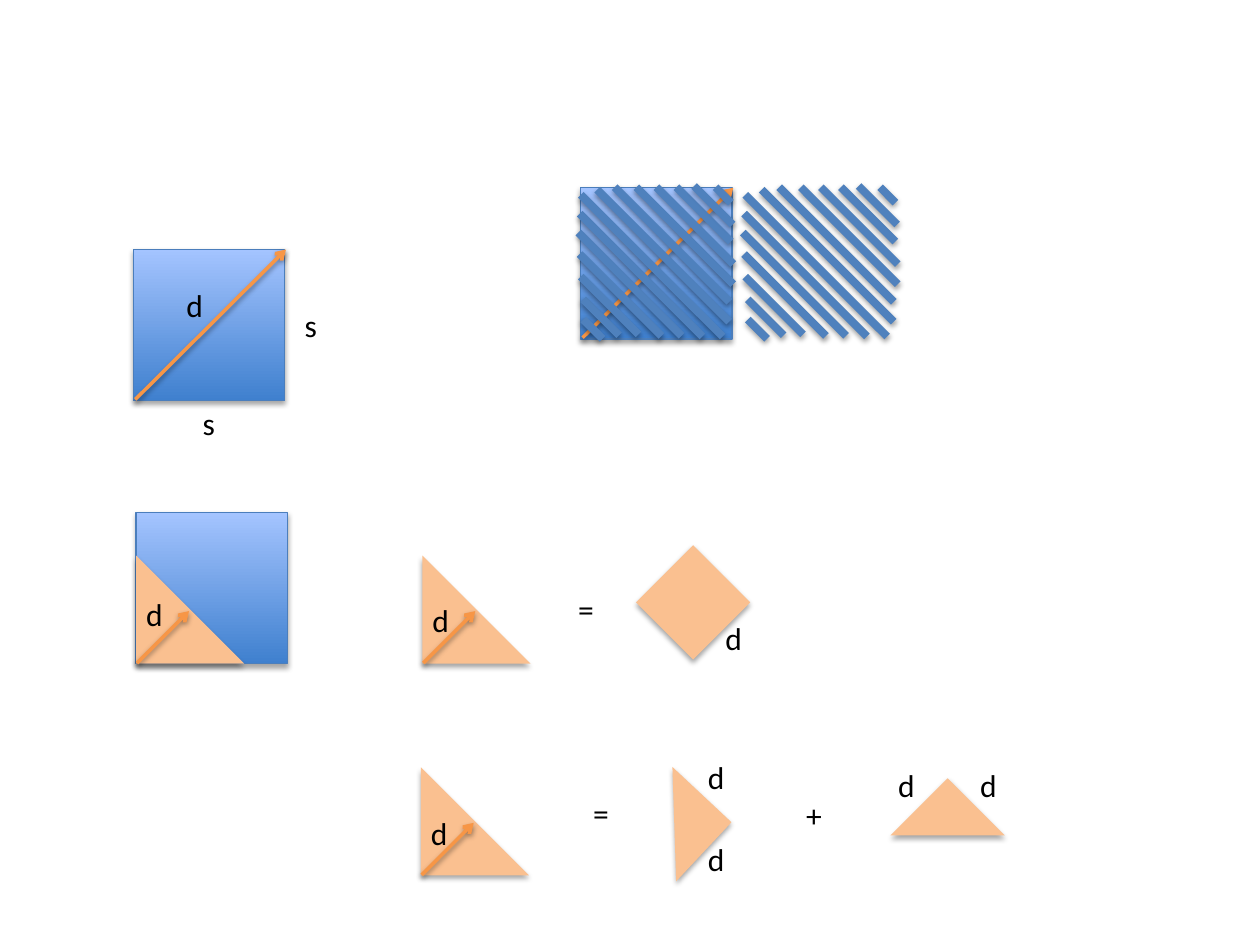
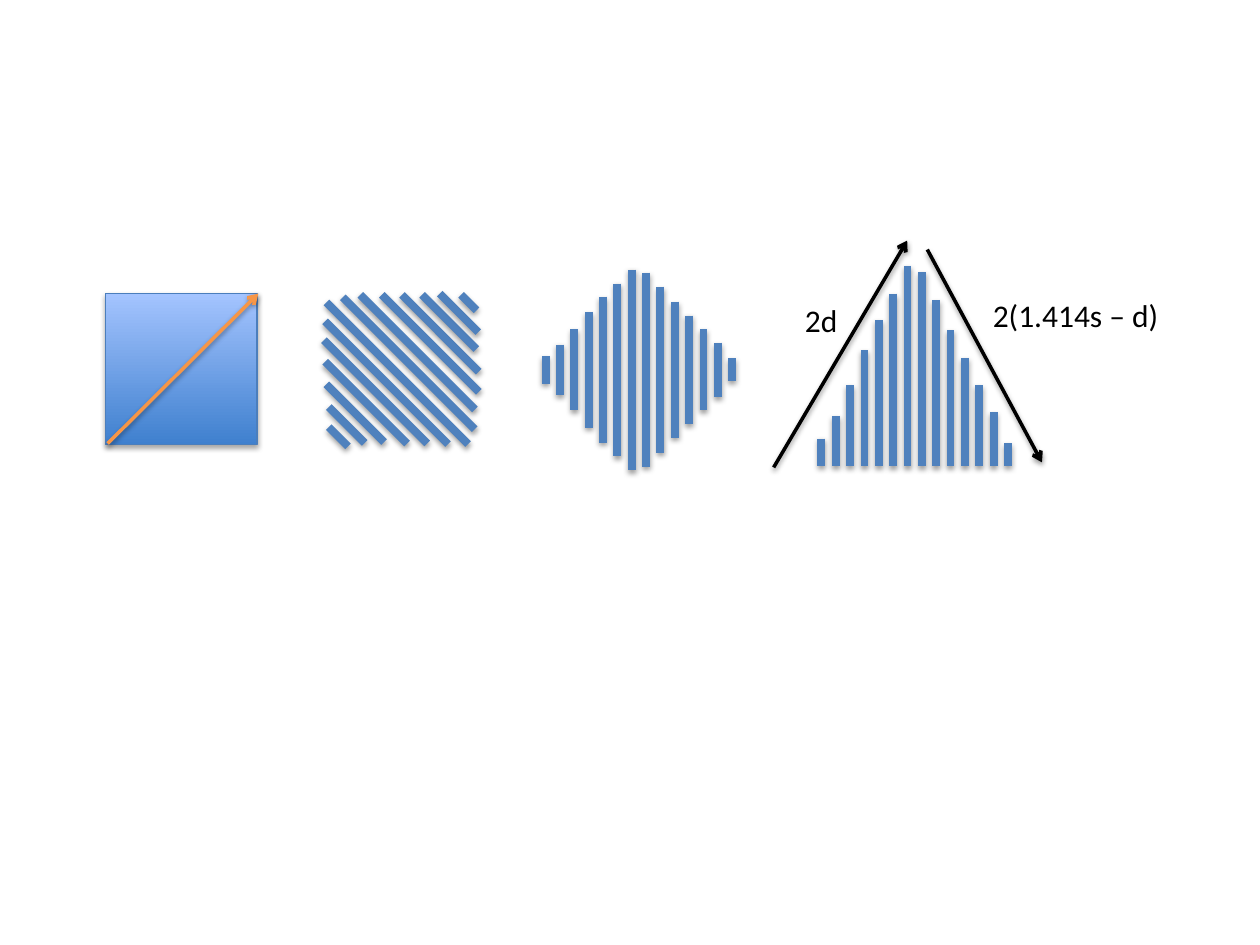
from dataclasses import dataclass
from lxml import etree
from pptx import Presentation
from pptx import util as u
from pptx.dml.color import RGBColor
from pptx.enum import shapes, text
from pptx.oxml import ns
from pptx.shapes.autoshape import Shape
from pptx.shapes.base import BaseShape
from pptx.slide import Slide

SQUARE_BOTTOM = RGBColor(0x3F, 0x80, 0xCE)
SQUARE_TOP = RGBColor(0xA4, 0xC4, 0xFF)
SQUARE_EDGE = RGBColor(0x4B, 0x7E, 0xBC)
STRIPE_BLUE = RGBColor(0x4F, 0x81, 0xBD)
ARROW_ORANGE = RGBColor(0xF7, 0x96, 0x46)
CORNER_PEACH = RGBColor(0xFA, 0xC0, 0x90)
BLACK = RGBColor(0, 0, 0)

SIDE = 86.4
CORNER_SIDE = 61.8
PIECE_SIDE = 46.2
BAR_STEP = 8.2
BAR_LENGTHS = (15.8, 28.8, 46.1, 66.2, 83.5, 98.6, 114.5,
               110.9, 95, 77.8, 61.9, 46.1, 31, 13)


@dataclass(frozen=True)
class Stripe:
    left: float
    top: float
    reach: float


@dataclass(frozen=True)
class Label:
    words: str
    left: float
    top: float
    width: float = 23.8


@dataclass(frozen=True)
class Piece:
    kind: shapes.MSO_SHAPE
    left: float
    top: float
    rotation: float


@dataclass(frozen=True)
class CornerTriangle:
    left: float
    top: float
    label_drop: float


STRIPES = (
    Stripe(1.4, 64.1, 20.5), Stripe(0, 51.1, 33), Stripe(-0.7, 38.2, 46.8),
    Stripe(-1.4, 25.9, 59), Stripe(-0.7, 15.1, 70.2), Stripe(0, 4.3, 81),
    Stripe(9.4, 1.4, 75.4), Stripe(19.4, 0, 65.5), Stripe(31.7, 0, 55.4),
    Stripe(43.2, 0, 43.9), Stripe(54.7, 0, 31), Stripe(64.8, -0.7, 22),
    Stripe(1.4, 75.6, 11), Stripe(77, 0, 8.8),
)
CORNERS = (
    CornerTriangle(77.8, 317.5, 18.7),
    CornerTriangle(241.4, 317.5, 22.3),
    CornerTriangle(240.5, 438.5, 23),
)
PIECES = (
    Piece(shapes.MSO_SHAPE.RECTANGLE, 373, 321.1, 315),
    Piece(shapes.MSO_SHAPE.RIGHT_TRIANGLE, 362.2, 447.8, 223.1),
    Piece(shapes.MSO_SHAPE.RIGHT_TRIANGLE, 518.4, 454.3, 135),
)
PROOF_LABELS = (
    Label("d", 99.4, 159.8), Label("s", 108.7, 227.5, 21.6),
    Label("s", 167, 171.4, 21.6), Label("=", 323.3, 333.4),
    Label("d", 407.5, 349.9), Label("d", 397.4, 476.6),
    Label("d", 397.4, 429.8), Label("=", 331.9, 450),
    Label("+", 453.6, 451.4), Label("d", 506.2, 434.2),
    Label("d", 553, 434.2),
)
SUM_LABELS = (
    Label("2d", 452.9, 168.5, 33.1),
    Label("2(1.414s – d)", 560.2, 165.6, 109.4),
)


def add_shadow(shape: BaseShape, opacity: int, distance: float) -> None:
    effects = etree.SubElement(shape.element.spPr, ns.qn("a:effectLst"))
    shadow = etree.SubElement(
        effects, ns.qn("a:outerShdw"), blurRad=str(u.Pt(3.1)),
        dist=str(u.Pt(distance)), dir="5400000", rotWithShape="0")
    colour = etree.SubElement(shadow, ns.qn("a:srgbClr"), val=str(BLACK))
    etree.SubElement(colour, ns.qn("a:alpha"), val=str(opacity * 1000))


def add_line(page: Slide, start: tuple[float, float], end: tuple[float, float],
             colour: RGBColor = STRIPE_BLUE, weight: float = 4.5,
             arrow: bool = False) -> None:
    line = page.shapes.add_connector(
        shapes.MSO_CONNECTOR.STRAIGHT, *map(u.Pt, (*start, *end)))
    line.line.color.rgb = colour
    line.line.width = u.Pt(weight)
    if arrow:
        etree.SubElement(line.line._get_or_add_ln(), ns.qn("a:tailEnd"), type="arrow")
    add_shadow(line, 38, 1.6)


def add_arrow(page: Slide, start: tuple[float, float], end: tuple[float, float],
              colour: RGBColor = ARROW_ORANGE) -> None:
    add_line(page, start, end, colour, weight=2, arrow=True)


def add_block(page: Slide, kind: shapes.MSO_SHAPE, left: float, top: float,
              side: float) -> Shape:
    return page.shapes.add_shape(kind, *map(u.Pt, (left, top, side, side)))


def add_square(page: Slide, left: float, top: float) -> None:
    square = add_block(page, shapes.MSO_SHAPE.RECTANGLE, left, top, SIDE)
    square.fill.gradient()
    square.fill.gradient_angle = 90
    stops = zip(square.fill.gradient_stops, (SQUARE_BOTTOM, SQUARE_TOP))
    for position, (stop, colour) in enumerate(stops):
        stop.position = position
        stop.color.rgb = colour
    square.line.color.rgb = SQUARE_EDGE
    square.line.width = u.Pt(0.75)
    add_shadow(square, 35, 1.8)


def add_diagonal(page: Slide, left: float, top: float) -> None:
    add_arrow(page, (left + 1, top + SIDE - 0.7), (left + SIDE + 0.7, top))


def add_peach(page: Slide, kind: shapes.MSO_SHAPE, left: float, top: float,
              side: float, rotation: float = 0) -> None:
    peach = add_block(page, kind, left, top, side)
    peach.rotation = rotation
    peach.fill.solid()
    peach.fill.fore_color.rgb = CORNER_PEACH
    peach.line.fill.background()
    add_shadow(peach, 35, 1.8)


def add_text(page: Slide, words: str, *, left: float, top: float,
             width: float, size: float = 18, font: str = "Calibri",
             colour: RGBColor = BLACK) -> None:
    box = page.shapes.add_textbox(*map(u.Pt, (left, top, width, 29)))
    box.text_frame.word_wrap = False
    box.text_frame.auto_size = text.MSO_AUTO_SIZE.SHAPE_TO_FIT_TEXT
    span = box.text_frame.paragraphs[0].add_run()
    span.text = words
    span.font.size = u.Pt(size)
    span.font.name = font
    span.font.color.rgb = colour


def add_labels(page: Slide, labels: tuple[Label, ...]) -> None:
    for label in labels:
        add_text(page, label.words, left=label.left, top=label.top, width=label.width)


def add_corner(page: Slide, corner: CornerTriangle) -> None:
    left, top = corner.left, corner.top
    add_peach(page, shapes.MSO_SHAPE.RIGHT_TRIANGLE, left, top, CORNER_SIDE)
    add_arrow(page, (left + 0.5, top + 61.4), (left + 30.2, top + 31.7))
    add_text(page, "d", left=left - 1.4, top=top + corner.label_drop, width=23.8)


def add_hatching(page: Slide, left: float, top: float) -> None:
    for stripe in STRIPES:
        x, y = left + stripe.left, top + stripe.top
        add_line(page, (x, y), (x + stripe.reach, y + stripe.reach))


def add_bars(page: Slide, left: float, level: float, share_below: float) -> None:
    for index, length in enumerate(BAR_LENGTHS):
        x = left + index * BAR_STEP
        bottom = level + length * share_below
        add_line(page, (x, bottom - length), (x, bottom))


def build_proof(page: Slide) -> None:
    for left, top in ((76.3, 142.6), (331.9, 107.3)):
        add_square(page, left, top)
        add_diagonal(page, left, top)
    for left in (331.9, 425.9):
        add_hatching(page, left, 107)
    add_square(page, 77.8, 293)
    for corner in CORNERS:
        add_corner(page, corner)
    for piece in PIECES:
        add_peach(page, piece.kind, piece.left, piece.top, PIECE_SIDE, piece.rotation)
    add_labels(page, PROOF_LABELS)


def build_sum(page: Slide) -> None:
    add_square(page, 60.5, 167.8)
    add_hatching(page, 186.5, 168.5)
    add_bars(page, 311.8, 211.3, share_below=0.5)
    add_diagonal(page, 60.5, 167.8)
    add_bars(page, 469.4, 266.4, share_below=0)
    add_arrow(page, (442.1, 267.1), (518.4, 137.5), BLACK)
    add_arrow(page, (529.9, 142.6), (595.4, 264.2), BLACK)
    add_labels(page, SUM_LABELS)


def main() -> None:
    deck = Presentation()
    deck.slide_width, deck.slide_height = u.Pt(720), u.Pt(540)
    for build in (build_proof, build_sum):
        build(deck.slides.add_slide(deck.slide_layouts[6]))
    deck.save("out.pptx")


if __name__ == "__main__":
    main()
